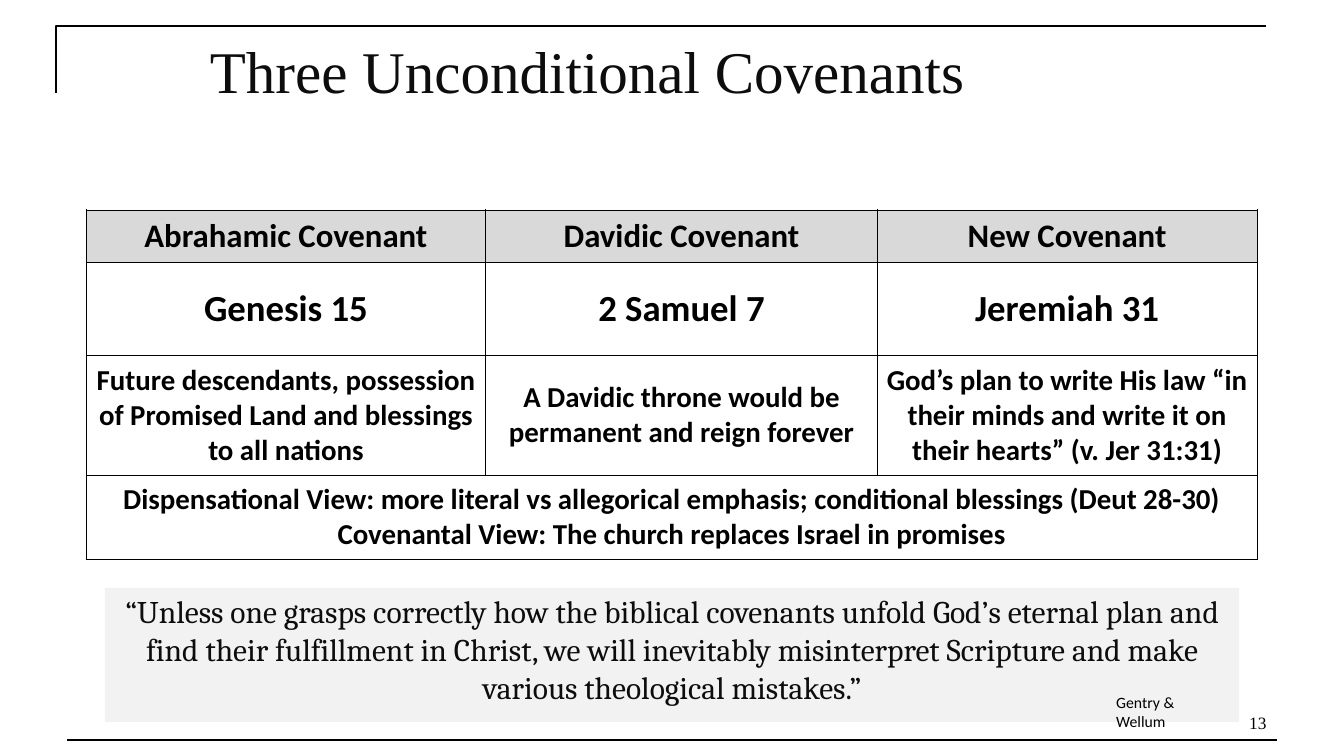
from lxml import etree
from pptx import Presentation
from pptx.dml.color import RGBColor
from pptx.enum.shapes import MSO_CONNECTOR, MSO_SHAPE
from pptx.enum.text import MSO_ANCHOR, PP_ALIGN
from pptx.oxml.ns import qn
from pptx.util import Inches, Pt

LEFT, CENTER, RIGHT = PP_ALIGN.LEFT, PP_ALIGN.CENTER, PP_ALIGN.RIGHT
TOP, MIDDLE, BOTTOM = MSO_ANCHOR.TOP, MSO_ANCHOR.MIDDLE, MSO_ANCHOR.BOTTOM
RECTANGLE, STRAIGHT = MSO_SHAPE.RECTANGLE, MSO_CONNECTOR.STRAIGHT

WIDTH, HEIGHT = Inches(14.22), Inches(8)
COLORS = {
    "ink": "000000",
    "soft ink": "0D0D0D",
    "header": "D9D9D9",
    "quote": "F2F2F2",
    "paper": "FFFFFF",
}
RULE_WEIGHT = 1.5

COLUMN_SHARES = [29.75, 29.11, 28.27]
ROW_SHARES = [6.88, 12.38, 15.88, 11.13]
ROW_SIZES = [25, 28, 22, 22]
COVENANTS = [
    ["Abrahamic Covenant", "Davidic Covenant", "New Covenant"],
    ["Genesis 15", "2 Samuel 7", "Jeremiah 31"],
    [
        "Future descendants, possession of Promised Land and blessings to all nations",
        "A Davidic throne would be permanent and reign forever",
        "God’s plan to write His law “in their minds and write it on their hearts” (v. Jer 31:31)",
    ],
]
VIEWS = [
    "Dispensational View: more literal vs allegorical emphasis; conditional blessings (Deut 28-30)",
    "Covenantal View: The church replaces Israel in promises",
]
QUOTE = (
    "“Unless one grasps correctly how the biblical covenants unfold God’s eternal plan "
    "and find their fulfillment in Christ, we will inevitably misinterpret Scripture "
    "and make various theological mistakes.”"
)


def color(name):
    return RGBColor.from_string(COLORS[name])


def across(percent):
    return round(WIDTH * percent / 100)


def down(percent):
    return round(HEIGHT * percent / 100)


def area(left, top, width, height):
    """Turn percentages of the slide into a position and size."""
    return across(left), down(top), across(width), down(height)


def write(text_frame, lines, font_name, size, ink="ink", align=LEFT, bold=False):
    for index, line in enumerate(lines):
        paragraph = text_frame.paragraphs[0] if index == 0 else text_frame.add_paragraph()
        paragraph.alignment = align
        run = paragraph.add_run()
        run.text = line
        run.font.name = font_name
        run.font.size = Pt(size)
        run.font.bold = bold
        run.font.color.rgb = color(ink)


def set_frame(text_frame, anchor, wrap=True):
    text_frame.word_wrap = wrap
    text_frame.vertical_anchor = anchor
    text_frame.margin_left = text_frame.margin_right = Inches(0.11)
    text_frame.margin_top = text_frame.margin_bottom = Inches(0.05)


def add_text(slide, place, text, font_name, size, anchor=TOP, wrap=True, **style):
    text_frame = slide.shapes.add_textbox(*place).text_frame
    set_frame(text_frame, anchor, wrap)
    write(text_frame, [text], font_name, size, **style)


def add_panel(slide, place, text):
    shape = slide.shapes.add_shape(RECTANGLE, *place)
    shape.shadow.inherit = False
    shape.fill.solid()
    shape.fill.fore_color.rgb = color("quote")
    shape.line.fill.background()
    set_frame(shape.text_frame, TOP)
    write(shape.text_frame, [text], "Cambria", 24, ink="soft ink", align=CENTER)


def draw_line(line):
    line.color.rgb = color("ink")
    line.width = Pt(RULE_WEIGHT)


def add_bottom_rule(slide):
    height = down(97.88)
    rule = slide.shapes.add_connector(STRAIGHT, across(4.99), height, across(95.01), height)
    draw_line(rule.line)
    etree.SubElement(rule._element.spPr, qn("a:effectLst"))


def add_corner(slide):
    left, top = across(4.15), down(3.38)
    builder = slide.shapes.build_freeform(left, down(12.25), scale=1.0)
    builder.add_line_segments([(left, top), (across(94.16), top)], close=False)
    corner = builder.convert_to_shape()
    corner.shadow.inherit = False
    corner.fill.background()
    draw_line(corner.line)


def set_borders(cell, weights):
    """Draw the left, right, top and bottom borders with weights in points."""
    properties = cell._tc.get_or_add_tcPr()
    for side, weight in zip("LRTB", weights):
        border = etree.SubElement(properties, qn(f"a:ln{side}"), w=str(Pt(weight)))
        fill = etree.SubElement(border, qn("a:solidFill"))
        etree.SubElement(fill, qn("a:srgbClr"), val=COLORS["ink"])


def format_cell(cell, fill, weights):
    set_borders(cell, weights)
    cell.fill.solid()
    cell.fill.fore_color.rgb = color(fill)
    cell.vertical_anchor = MIDDLE
    cell.margin_left = cell.margin_right = Inches(0.1)
    cell.margin_top = cell.margin_bottom = Inches(0.05)


def add_covenant_table(slide):
    place = area(6.4, 27.75, sum(COLUMN_SHARES), sum(ROW_SHARES))
    table = slide.shapes.add_table(len(ROW_SHARES), len(COLUMN_SHARES), *place).table
    table.first_row = table.horz_banding = False
    for column, share in zip(table.columns, COLUMN_SHARES):
        column.width = across(share)
    for row, share in zip(table.rows, ROW_SHARES):
        row.height = down(share)

    last_row, last_column = len(ROW_SHARES) - 1, len(COLUMN_SHARES) - 1
    table.cell(last_row, 0).merge(table.cell(last_row, last_column))
    for row in range(last_row + 1):
        for column in range(last_column + 1):
            inner = row < last_row
            left = 1 if inner and column > 0 else 0.5
            right = 1 if inner and column < last_column else 0.5
            fill = "header" if row == 0 else "paper"
            format_cell(table.cell(row, column), fill, (left, right, 0.5, 0.5))

    contents = [[[text] for text in texts] for texts in COVENANTS] + [[VIEWS]]
    for row, cells in enumerate(contents):
        for column, lines in enumerate(cells):
            text_frame = table.cell(row, column).text_frame
            write(text_frame, lines, "Calibri", ROW_SIZES[row], align=CENTER, bold=True)


def main():
    presentation = Presentation()
    presentation.slide_width, presentation.slide_height = WIDTH, HEIGHT
    slide = presentation.slides.add_slide(presentation.slide_layouts[6])

    add_bottom_rule(slide)
    add_corner(slide)
    add_panel(slide, area(7.81, 77.75, 84.39, 17.75), QUOTE)
    add_text(slide, area(14.84, 4, 78.34, 11.63), "Three Unconditional Covenants",
             "Times New Roman", 45, ink="soft ink")
    add_text(slide, area(71.66, 91, 23.35, 6.63), "13",
             "Times New Roman", 13.2, anchor=BOTTOM, align=RIGHT)
    add_covenant_table(slide)
    add_text(slide, area(82.28, 91, 9.77, 3.75), "Gentry & Wellum",
             "Calibri", 12, wrap=False)

    presentation.save("out.pptx")


if __name__ == "__main__":
    main()
